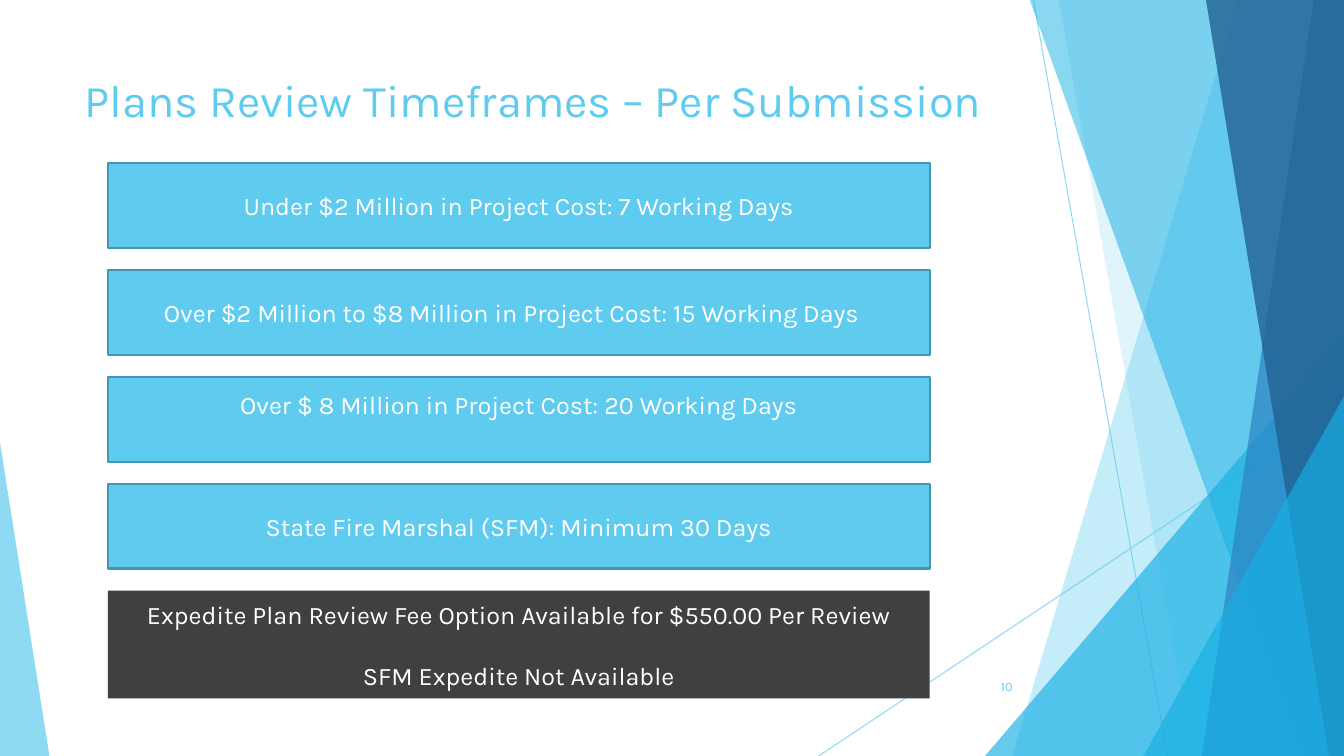
from pptx import Presentation
from pptx.dml.color import RGBColor
from pptx.enum.shapes import MSO_CONNECTOR, MSO_SHAPE
from pptx.enum.text import MSO_ANCHOR, PP_ALIGN
from pptx.oxml.ns import qn
from pptx.util import Pt
from lxml.etree import SubElement

EMU_PER_PX = 9144  # 100 px to the inch
SLIDE_WIDTH, SLIDE_HEIGHT = 1333, 750
FONT = "Karla"

SKY = RGBColor(0x5F, 0xCB, 0xEF)
CYAN = RGBColor(0x17, 0xB0, 0xE4)
BLUE = RGBColor(0x2E, 0x83, 0xC3)
NAVY = RGBColor(0x22, 0x62, 0x92)
CARD_EDGE = RGBColor(0x46, 0x96, 0xB1)
CHARCOAL = RGBColor(0x40, 0x40, 0x40)
WHITE = RGBColor(0xFF, 0xFF, 0xFF)

CARD_LEFT, CARD_TOP, CARD_WIDTH, CARD_HEIGHT = 107, 162, 815, 84
CARD_PITCH = 106

# Card text and the insets that shift it off centre
CARDS = [
    ("Under $2 Million in Project Cost: 7 Working Days", {}),
    ("Over $2 Million to $8 Million in Project Cost: 15 Working Days",
     {"margin_right": 24}),
    ("Over $ 8 Million in Project Cost: 20 Working Days",
     {"margin_bottom": 35}),
    ("State Fire Marshal (SFM): Minimum 30 Days", {}),
]
EXPEDITE_LINES = [
    "Expedite Plan Review Fee Option Available for $550.00 Per Review",
    "SFM Expedite Not Available",
]


def px(*lengths):
    return [length * EMU_PER_PX for length in lengths]


def set_opacity(color_format, percent):
    color = color_format._xFill.find(qn("a:srgbClr"))
    SubElement(color, qn("a:alpha"), val=str(percent * 1000))


def fill_plain(shape, color, opacity=100):
    """Give the shape a flat fill with no outline or shadow."""
    shape.shadow.inherit = False
    shape.fill.solid()
    shape.fill.fore_color.rgb = color
    if opacity < 100:
        set_opacity(shape.fill.fore_color, opacity)
    shape.line.fill.background()


def add_hairline(slide, *ends):
    line = slide.shapes.add_connector(MSO_CONNECTOR.STRAIGHT, *px(*ends))
    line.line.width = Pt(0.75)
    line.line.color.rgb = SKY
    set_opacity(line.line.fill.fore_color, 70)
    SubElement(line._element.spPr, qn("a:effectLst"))


def add_ribbon(slide, top_x, bottom_x, color, opacity):
    """Fill from a slanted left edge to the right side of the slide."""
    builder = slide.shapes.build_freeform(top_x, -1, scale=EMU_PER_PX)
    builder.add_line_segments([
        (SLIDE_WIDTH, -1), (SLIDE_WIDTH, SLIDE_HEIGHT), (bottom_x, SLIDE_HEIGHT),
    ])
    fill_plain(builder.convert_to_shape(), color, opacity)


def add_corner(slide, box, apex, color, opacity):
    """Add a right triangle whose apex is at the left (0) or right (1)."""
    triangle = slide.shapes.add_shape(MSO_SHAPE.ISOSCELES_TRIANGLE, *px(*box))
    triangle.adjustments[0] = apex
    fill_plain(triangle, color, opacity)


def write_text(shape, lines, size, color, align, anchor=MSO_ANCHOR.MIDDLE, gap=0):
    frame = shape.text_frame
    frame.word_wrap = True
    frame.vertical_anchor = anchor
    for index, line in enumerate(lines):
        paragraph = frame.add_paragraph() if index else frame.paragraphs[0]
        paragraph.alignment = align
        paragraph.space_before = Pt(gap if index else 0)
        run = paragraph.add_run()
        run.text = line
        for name, value in {"name": FONT, "size": Pt(size)}.items():
            setattr(run.font, name, value)
        run.font.color.rgb = color


def add_card(slide, top, height, lines, color, edge=None, insets=None, gap=0):
    card = slide.shapes.add_shape(
        MSO_SHAPE.RECTANGLE, *px(CARD_LEFT, top, CARD_WIDTH, height))
    fill_plain(card, color)
    if edge is not None:
        card.line.color.rgb = edge
        card.line.width = Pt(1.5)
    write_text(card, lines, 18, WHITE, PP_ALIGN.CENTER, gap=gap)
    for name, inset in (insets or {}).items():
        setattr(card.text_frame, name, inset * EMU_PER_PX)


def add_backdrop(slide):
    add_hairline(slide, 1025, 0, 1158, 750)
    add_hairline(slide, 1333, 403, 812, 750)
    add_ribbon(slide, 1228, 1004, SKY, 36)
    add_ribbon(slide, 1050, 1183, SKY, 20)
    add_corner(slide, (977, 333, 356, 417), 1, CYAN, 66)
    add_ribbon(slide, 1021, 1291, CYAN, 50)
    add_ribbon(slide, 1303, 1192, BLUE, 70)
    add_ribbon(slide, 1196, 1318, NAVY, 80)
    add_corner(slide, (1134, 393, 199, 357), 1, CYAN, 66)
    add_corner(slide, (0, 439, 49, 311), 0, SKY, 70)


def add_title(slide, text):
    title = slide.shapes.title
    title.left, title.top, title.width, title.height = px(74, 67, 940, 93)
    write_text(title, [text], 32.4, SKY, PP_ALIGN.LEFT, MSO_ANCHOR.TOP)


def add_page_number(slide, number):
    box = slide.shapes.add_textbox(*px(939, 661, 75, 40))
    write_text(box, [number], 9, SKY, PP_ALIGN.RIGHT)


def main():
    presentation = Presentation()
    presentation.slide_width, presentation.slide_height = px(SLIDE_WIDTH, SLIDE_HEIGHT)
    slide = presentation.slides.add_slide(presentation.slide_layouts.get_by_name("Title Only"))

    add_backdrop(slide)
    add_title(slide, "Plans Review Timeframes – Per Submission")
    for index, (text, insets) in enumerate(CARDS):
        add_card(slide, CARD_TOP + index * CARD_PITCH, CARD_HEIGHT, [text],
                 SKY, CARD_EDGE, insets)
    add_card(slide, CARD_TOP + len(CARDS) * CARD_PITCH, 107, EXPEDITE_LINES,
             CHARCOAL, gap=22)
    add_page_number(slide, "10")

    presentation.save("out.pptx")


if __name__ == "__main__":
    main()
